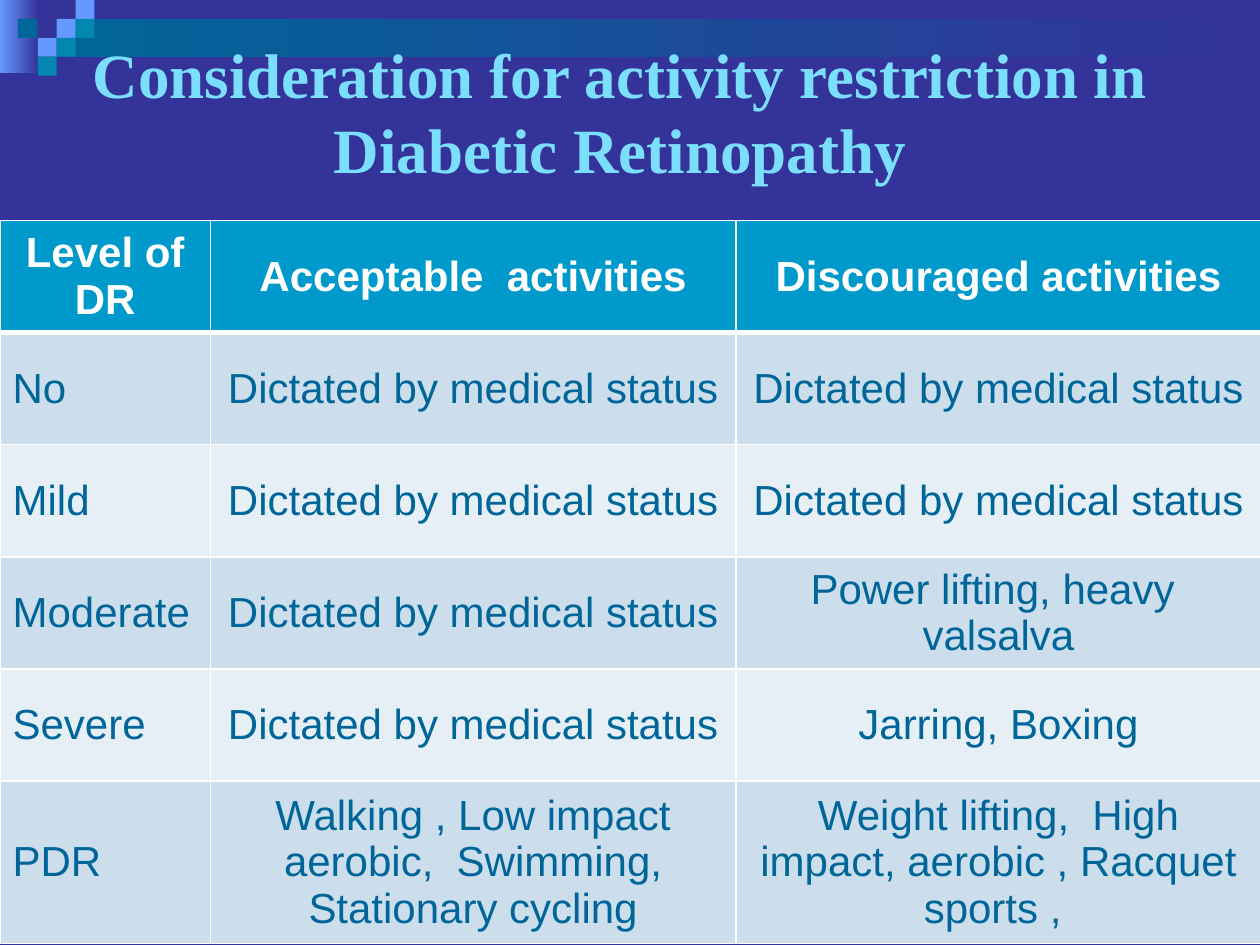
from dataclasses import dataclass

from lxml import etree
from pptx import Presentation
from pptx.dml.color import RGBColor
from pptx.enum.shapes import MSO_SHAPE
from pptx.enum.text import MSO_ANCHOR, MSO_AUTO_SIZE, PP_ALIGN
from pptx.oxml.ns import qn
from pptx.util import Inches, Pt

RECT = MSO_SHAPE.RECTANGLE
MIDDLE = MSO_ANCHOR.MIDDLE
LEFT, CENTER = PP_ALIGN.LEFT, PP_ALIGN.CENTER
NO_FIT = MSO_AUTO_SIZE.NONE


@dataclass(frozen=True)
class Theme:
    back: str = "333399"
    blue: str = "6699FF"
    deep: str = "006699"
    teal: str = "0386AF"
    title: str = "7CDEFD"
    head: str = "0099CC"
    bands: tuple = ("CCDEEC", "E7EFF6")
    white: str = "FFFFFF"
    serif: str = "Times New Roman"
    sans: str = "Arial"
    title_size: int = 36
    cell_size: int = 24
    thin: int = 1
    thick: int = 3


def rgb(code):
    return RGBColor.from_string(code)


class Deck:
    def __init__(self, theme):
        self.theme = theme
        self.file = Presentation()
        self.file.slide_width = Inches(10)
        self.file.slide_height = Inches(7.5)
        self.slide = self.file.slides.add_slide(self.file.slide_layouts[5])
        fill = self.slide.background.fill
        fill.solid()
        fill.fore_color.rgb = rgb(theme.back)

    def style(self, frame, size, face, color, bold, align):
        frame.word_wrap = True
        for para in frame.paragraphs:
            para.alignment = align
            font = para.font
            font.size, font.name, font.bold = Pt(size), face, bold
            font.color.rgb = rgb(color)

    def block(self, box, color, fade=None):
        """Add a plain rectangle; with fade, its fill runs left to right."""
        shape = self.slide.shapes.add_shape(RECT, *map(Inches, box))
        shape.shadow.inherit = False
        shape.line.fill.background()
        if fade:
            shape.fill.gradient()
            shape.fill.gradient_angle = 0
            for stop, code, place in zip(shape.fill.gradient_stops, (color, fade), (0, 1)):
                stop.color.rgb = rgb(code)
                stop.position = place
        else:
            shape.fill.solid()
            shape.fill.fore_color.rgb = rgb(color)

    def title(self, text, box):
        look = self.theme
        shape = self.slide.shapes.title
        shape.left, shape.top, shape.width, shape.height = map(Inches, box)
        frame = shape.text_frame
        frame.text = text
        frame.auto_size = NO_FIT
        frame.vertical_anchor = MIDDLE
        self.style(frame, look.title_size, look.serif, look.title, True, CENTER)
        # Bring the title in front of the blocks
        self.slide.shapes._spTree.append(shape._element)

    def edge(self, cell, side, width):
        props = cell._tc.get_or_add_tcPr()
        line = etree.SubElement(props, qn(f"a:ln{side}"), w=str(Pt(width)))
        fill = etree.SubElement(line, qn("a:solidFill"))
        etree.SubElement(fill, qn("a:srgbClr"), val=self.theme.white)

    def cell(self, cell, text, row, col):
        look = self.theme
        head = row == 0
        cell.text = text
        cell.vertical_anchor = MIDDLE
        self.style(cell.text_frame, look.cell_size, look.sans,
                   look.white if head else look.deep, head,
                   CENTER if head or col else LEFT)
        thick = {(0, "B"), (1, "T")}
        for side in "LRTB":
            self.edge(cell, side, look.thick if (row, side) in thick else look.thin)
        cell.fill.solid()
        cell.fill.fore_color.rgb = rgb(look.head if head else look.bands[(row - 1) % 2])

    def table(self, rows, box, widths, heights):
        table = self.slide.shapes.add_table(len(rows), len(widths), *map(Inches, box)).table
        for col, width in zip(table.columns, widths):
            col.width = Inches(width)
        for row, height in zip(table.rows, heights):
            row.height = Inches(height)
        for r, texts in enumerate(rows):
            for c, text in enumerate(texts):
                self.cell(table.cell(r, c), text, r, c)


def main():
    look = Theme()
    deck = Deck(look)

    deck.block((0, 0, 0.31, 0.58), look.blue, look.back)
    deck.block((0.45, 0.15, 9.55, 0.3), look.deep, look.back)
    side = 0.15
    tiles = [(3, 1, look.blue), (4, 0, look.blue), (4, 1, look.teal),
             (2, 2, look.blue), (0.95, 1, look.deep), (3, 2, look.teal),
             (2, 3, look.teal)]
    for col, row, color in tiles:
        deck.block((col * side, row * side, side, side), color)

    deck.title("Consideration for activity restriction in Diabetic Retinopathy",
               (0.42, 0.42, 9, 0.92))

    status = "Dictated by medical status"
    rows = [
        ("Level of DR", "Acceptable  activities", "Discouraged activities"),
        ("No", status, status),
        ("Mild", status, status),
        ("Moderate", status, "Power lifting, heavy  valsalva"),
        ("Severe", status, "Jarring, Boxing"),
        ("PDR", "Walking , Low impact aerobic,  Swimming, Stationary cycling",
         "Weight lifting,  High impact, aerobic , Racquet sports , "),
    ]
    heights = [0.89] * 5 + [1.29]
    deck.table(rows, (0, 1.75, 10, sum(heights)), (1.67, 4.17, 4.17), heights)

    deck.file.save("out.pptx")


if __name__ == "__main__":
    main()
